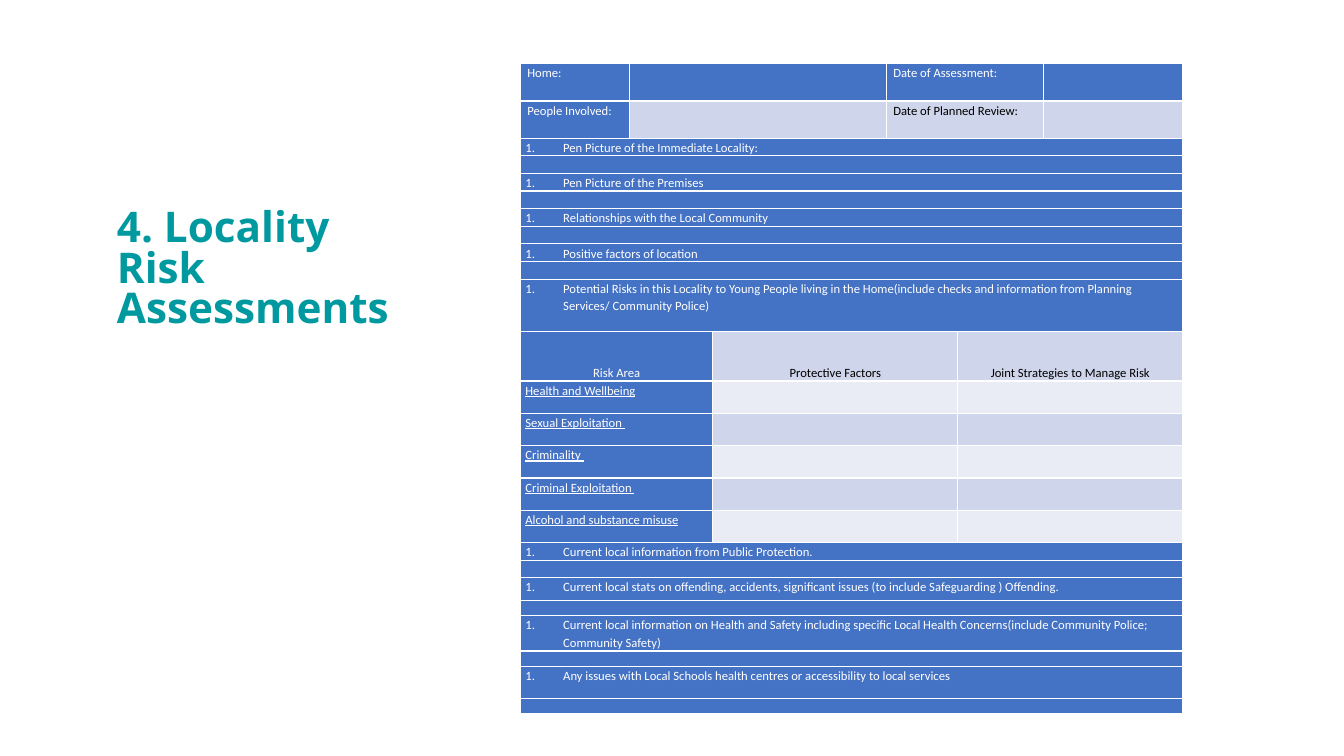
from pptx import Presentation
from pptx.dml.color import RGBColor
from pptx.enum.text import MSO_ANCHOR, PP_ALIGN
from pptx.oxml.ns import qn
from pptx.util import Pt
from lxml import etree

TOP, MIDDLE, BOTTOM = MSO_ANCHOR.TOP, MSO_ANCHOR.MIDDLE, MSO_ANCHOR.BOTTOM
LEFT, CENTER = PP_ALIGN.LEFT, PP_ALIGN.CENTER

THEME = {
    "title": "0099A0", "blue": "4472C4", "band": "CFD5EA", "pale": "E9EBF5",
    "white": "FFFFFF", "black": "000000",
    "title_font": "Open Sans", "body_font": "Calibri",
    "title_size": 30.2, "body_size": 9, "empty_size": 6,
}

TITLE = "4. Locality Risk Assessments"
TITLE_BOX = (76.3, 98.6, 213.8, 190.1)
FORM_LEFT, FORM_TOP = 371.7, 45.5
DETAILS = [
    ["Home:", "", "Date of Assessment:", ""],
    ["People Involved:", "", "Date of Planned Review:", ""],
]
DETAIL_FILLS = [["blue"] * 4, ["blue"] + ["band"] * 3]
DETAIL_WIDTHS = [77.8, 183.6, 112.3, 99.3]
DETAIL_HEIGHTS = [26.6, 26.6]

LINE = 12.6
SECTIONS_BEFORE = [
    ("Pen Picture of the Immediate Locality:", LINE, LINE),
    ("Pen Picture of the Premises", LINE, LINE),
    ("Relationships with the Local Community", LINE, LINE),
    ("Positive factors of location", LINE, LINE),
    ("Potential Risks in this Locality to Young People living in the Home"
     "(include checks and information from Planning Services/ Community Police)", 37.6, None),
]
RISK_HEADER = ["Risk Area", "Protective Factors", "Joint Strategies to Manage Risk"]
RISKS = ["Health and Wellbeing", "Sexual Exploitation ", "Criminality ",
         "Criminal Exploitation ", "Alcohol and substance misuse"]
SECTIONS_AFTER = [
    ("Current local information from Public Protection.", LINE, LINE),
    ("Current local stats on offending, accidents, significant issues "
     "(to include Safeguarding ) Offending.", 16.4, 10.4),
    ("Current local information on Health and Safety including specific Local Health Concerns"
     "(include Community Police; Community Safety)", 25.6, 11),
    ("Any issues with Local Schools health centres or accessibility to local services", 23, 10.7),
]
RISK_WIDTHS = [137.5, 175, 160.5]
HEADER_HEIGHT, RISK_HEIGHT = 35.2, 23.1


def color(name):
    """Return a theme colour."""
    return RGBColor.from_string(THEME[name])


def add_borders(cell):
    """Draw thin white lines on all sides of a cell."""
    tcPr = cell._tc.get_or_add_tcPr()
    for i, side in enumerate(("a:lnL", "a:lnR", "a:lnT", "a:lnB")):
        ln = etree.Element(qn(side), w=str(Pt(1)))
        fill = etree.SubElement(ln, qn("a:solidFill"))
        etree.SubElement(fill, qn("a:srgbClr"), val=THEME["white"])
        tcPr.insert(i, ln)


def number_paragraph(p):
    """Give a paragraph a number and a hanging indent."""
    pPr = p._p.get_or_add_pPr()
    pPr.set("marL", str(Pt(27)))
    pPr.set("indent", str(-Pt(27)))
    etree.SubElement(pPr, qn("a:buFont"), typeface=THEME["body_font"])
    etree.SubElement(pPr, qn("a:buAutoNum"), type="arabicPeriod")


def format_cell(cell, text, fill, inset, align=LEFT, anchor=TOP, numbered=False, underline=False):
    """Fill a cell and write its text."""
    cell.fill.solid()
    cell.fill.fore_color.rgb = color(fill)
    cell.margin_left = cell.margin_right = Pt(inset)
    cell.margin_top = cell.margin_bottom = 0
    cell.vertical_anchor = anchor
    add_borders(cell)
    p = cell.text_frame.paragraphs[0]
    if not text:
        etree.SubElement(p._p, qn("a:endParaRPr"), sz=str(THEME["empty_size"] * 100))
        return
    p.alignment = align
    p.line_spacing = 1.15
    if numbered:
        number_paragraph(p)
    r = p.add_run()
    r.text = text
    r.font.name = THEME["body_font"]
    r.font.size = Pt(THEME["body_size"])
    r.font.color.rgb = color("white" if fill == "blue" else "black")
    if underline:
        r.font.underline = True


def add_grid(s, top, widths, heights):
    """Add an unbanded table with the given columns and rows."""
    frame = s.shapes.add_table(len(heights), len(widths), Pt(FORM_LEFT), Pt(top),
                               Pt(sum(widths)), Pt(sum(heights)))
    table = frame.table
    table.first_row = table.horz_banding = False
    for column, width in zip(table.columns, widths):
        column.width = Pt(width)
    for row, height in zip(table.rows, heights):
        row.height = Pt(height)
    return table


def add_title(s):
    """Place and format the title."""
    sp = s.shapes.title
    sp.left, sp.top, sp.width, sp.height = map(Pt, TITLE_BOX)
    tf = sp.text_frame
    tf.word_wrap = True
    tf.vertical_anchor = MIDDLE
    p = tf.paragraphs[0]
    p.alignment = LEFT
    p.line_spacing = 0.8
    r = p.add_run()
    r.text = TITLE
    r.font.name = THEME["title_font"]
    r.font.size = Pt(THEME["title_size"])
    r.font.bold = True
    r.font.color.rgb = color("title")


def add_details(s):
    """Add the table of home and dates."""
    table = add_grid(s, FORM_TOP, DETAIL_WIDTHS, DETAIL_HEIGHTS)
    for i, (texts, fills) in enumerate(zip(DETAILS, DETAIL_FILLS)):
        for j, (text, fill) in enumerate(zip(texts, fills)):
            format_cell(table.cell(i, j), text, fill, 5)


def section_rows(sections):
    """List each section heading and its answer row with heights."""
    rows = []
    for text, height, answer_height in sections:
        rows.append(("section", text, height))
        if answer_height:
            rows.append(("section", "", answer_height))
    return rows


def add_assessment(s):
    """Add the table of sections and risks."""
    rows = section_rows(SECTIONS_BEFORE)
    rows.append(("header", RISK_HEADER, HEADER_HEIGHT))
    rows += [("risk", [risk, "", ""], RISK_HEIGHT) for risk in RISKS]
    rows += section_rows(SECTIONS_AFTER)
    table = add_grid(s, FORM_TOP + sum(DETAIL_HEIGHTS), RISK_WIDTHS, [row[2] for row in rows])
    risk_count = 0
    for i, (kind, content, _) in enumerate(rows):
        cells = [table.cell(i, j) for j in range(len(RISK_WIDTHS))]
        if kind == "section":
            cells[0].merge(cells[-1])
            for cell, text in zip(cells, [content, "", ""]):
                format_cell(cell, text, "blue", 3.6, numbered=True)
            continue
        if kind == "header":
            fill, style = "band", {"align": CENTER, "anchor": BOTTOM}
        else:
            fill, style = ("pale", "band")[risk_count % 2], {"underline": True}
            risk_count += 1
        for cell, text, name in zip(cells, content, ["blue", fill, fill]):
            format_cell(cell, text, name, 3.6, **style)


def main():
    """Build and save the slide."""
    prs = Presentation()
    prs.slide_width, prs.slide_height = Pt(960), Pt(540)
    s = prs.slides.add_slide(prs.slide_layouts[5])
    add_title(s)
    add_details(s)
    add_assessment(s)
    prs.save("out.pptx")


if __name__ == "__main__":
    main()
